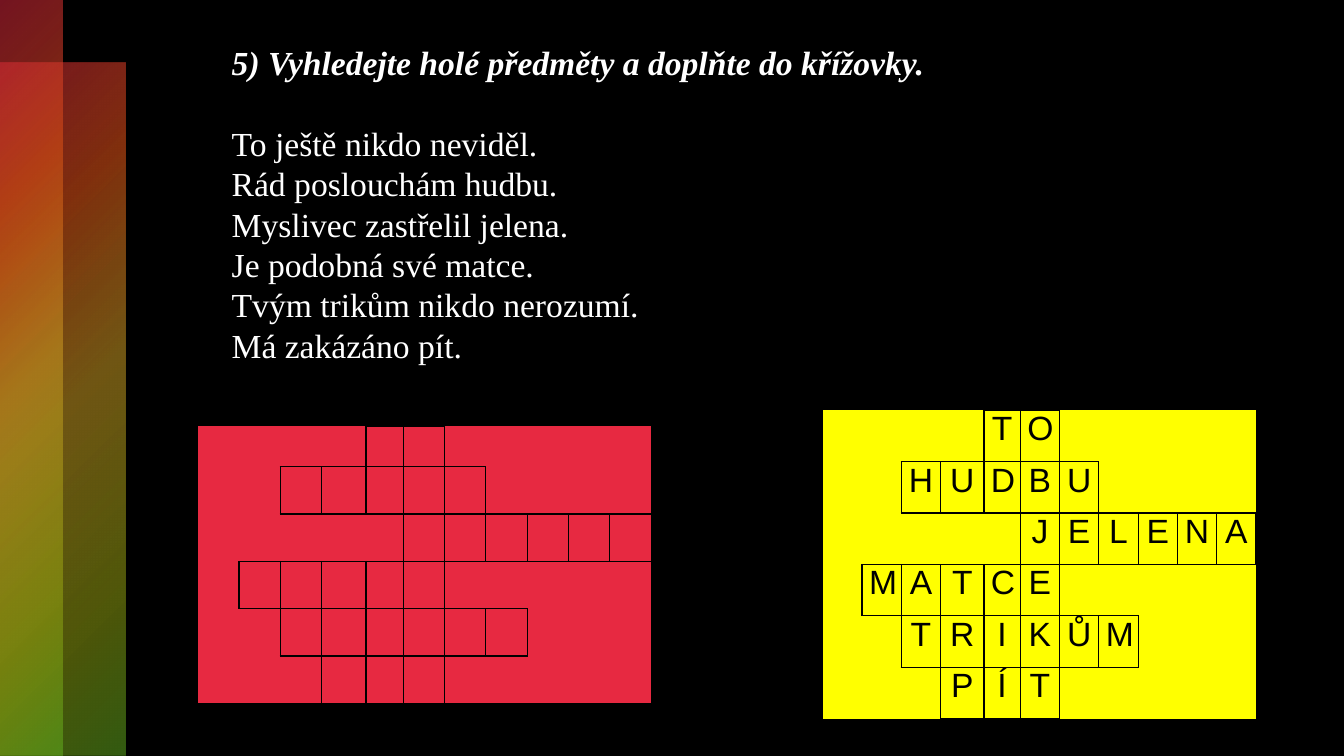
"""Builds a slide with a Czech grammar exercise, a blank crossword and its solution."""
import lxml.etree
import pptx
import pptx.dml.color
import pptx.enum.shapes
import pptx.enum.text
import pptx.oxml
import pptx.oxml.ns
import pptx.util

Inches = pptx.util.Inches
Pt = pptx.util.Pt
RGBColor = pptx.dml.color.RGBColor
COLORS = {"black": "000000", "white": "FFFFFF", "red": "E72941", "yellow": "FFFF00",
          "orange": "D54F17", "amber": "CD9C24", "lime": "9AAD13", "green": "66B721"}
GRADIENT_STOPS = [(0, "red", 50), (25, "orange", 60), (50, "amber", 55),
                  (81, "lime", 50), (99, "green", 50)]
SENTENCES = ["To ještě nikdo neviděl.", "Rád poslouchám\u00a0hudbu.", "Myslivec zastřelil jelena.",
             "Je podobná své matce.", "Tvým trikům nikdo nerozumí.", "Má zakázáno pít."]
ANSWERS = [(4, "TO"), (2, "HUDBU"), (5, "JELENA"), (1, "MATCE"), (2, "TRIKŮM"), (3, "PÍT")]
LETTERS = {(row, start + offset): letter
           for row, (start, word) in enumerate(ANSWERS)
           for offset, letter in enumerate(word)}
COLUMN_COUNT = 11
EDGES = [("a:lnL", 0, -1), ("a:lnR", 0, 1), ("a:lnT", -1, 0), ("a:lnB", 1, 0)]


def add_child(parent, tag, **attributes):
    return lxml.etree.SubElement(parent, pptx.oxml.ns.qn(tag), attributes)


def add_crossword(left, top, column_widths, row_heights, color, show_letters):
    table = slide.shapes.add_table(len(row_heights), COLUMN_COUNT, Inches(left), Inches(top),
                                   Inches(sum(column_widths)), Inches(sum(row_heights))).table
    table.first_row = False
    table.horz_banding = False
    for column, width in zip(table.columns, column_widths):
        column.width = Inches(width)
    for row, height in zip(table.rows, row_heights):
        row.height = Inches(height)
    for row in range(len(row_heights)):
        for column in range(COLUMN_COUNT):
            cell = table.cell(row, column)
            cell.margin_left = cell.margin_right = Inches(0.07)
            cell.margin_top = cell.margin_bottom = 0
            properties = cell._tc.get_or_add_tcPr()
            for tag, row_step, column_step in EDGES:
                neighbour = (row + row_step, column + column_step)
                edge = add_child(properties, tag, w="12700")
                if (row, column) in LETTERS or neighbour in LETTERS:
                    add_child(add_child(edge, "a:solidFill"), "a:srgbClr", val=COLORS["black"])
                else:
                    add_child(edge, "a:noFill")
            cell.fill.solid()
            cell.fill.fore_color.rgb = RGBColor.from_string(COLORS[color])
            if show_letters and (row, column) in LETTERS:
                paragraph = cell.text_frame.paragraphs[0]
                paragraph.text = LETTERS[row, column]
                paragraph.alignment = pptx.enum.text.PP_ALIGN.CENTER
                paragraph.font.size = Pt(24)
                paragraph.font.name = "Arial"
                paragraph.font.color.rgb = RGBColor.from_string(COLORS["black"])


presentation = pptx.Presentation()
presentation.slide_width = Inches(13.33)
presentation.slide_height = Inches(7.5)
slide = presentation.slides.add_slide(presentation.slide_layouts[6])
slide.background.fill.solid()
slide.background.fill.fore_color.rgb = RGBColor.from_string(COLORS["black"])

for top, width in [(0.62, 1.24), (0, 0.62)]:
    band = slide.shapes.add_shape(pptx.enum.shapes.MSO_SHAPE.RECTANGLE, 0, Inches(top),
                                  Inches(width), Inches(7.5 - top))
    band.shadow.inherit = False
    band.line.fill.background()
    band.fill.gradient()
    gradient = band._element.spPr.find(pptx.oxml.ns.qn("a:gradFill"))
    for child in list(gradient):
        gradient.remove(child)
    stops = add_child(gradient, "a:gsLst")
    for position, color, opacity in GRADIENT_STOPS:
        stop = add_child(stops, "a:gs", pos=str(position * 1000))
        stop_color = add_child(stop, "a:srgbClr", val=COLORS[color])
        add_child(stop_color, "a:alpha", val=str(opacity * 1000))
    focus = add_child(gradient, "a:path", path="circle")
    add_child(focus, "a:fillToRect", r="100000", b="100000")

exercise = slide.shapes.add_textbox(Inches(2.2), Inches(0.37), Inches(7.87), Inches(3.74))
text_frame = exercise.text_frame
text_frame.word_wrap = True
heading = text_frame.paragraphs[0]
heading.text = "5) Vyhledejte holé předměty a doplňte do křížovky."
heading.font.bold = True
heading.font.italic = True
heading.space_after = Pt(28.8)
for sentence in SENTENCES:
    text_frame.add_paragraph().text = sentence
for paragraph in text_frame.paragraphs:
    paragraph.line_spacing = Pt(28.8)
    paragraph.font.size = Pt(24)
    paragraph.font.name = "Times New Roman"
    paragraph.font.color.rgb = RGBColor.from_string(COLORS["white"])

add_crossword(1.96, 4.23, [0.41] * 3 + [0.44, 0.37] + [0.41] * 6,
              [0.4] + [0.47] * 5, "red", False)
add_crossword(8.16, 4.07, [0.39] * 3 + [0.43, 0.36] + [0.39] * 6,
              [0.51] * 6, "yellow", True)

presentation.save("out.pptx")
